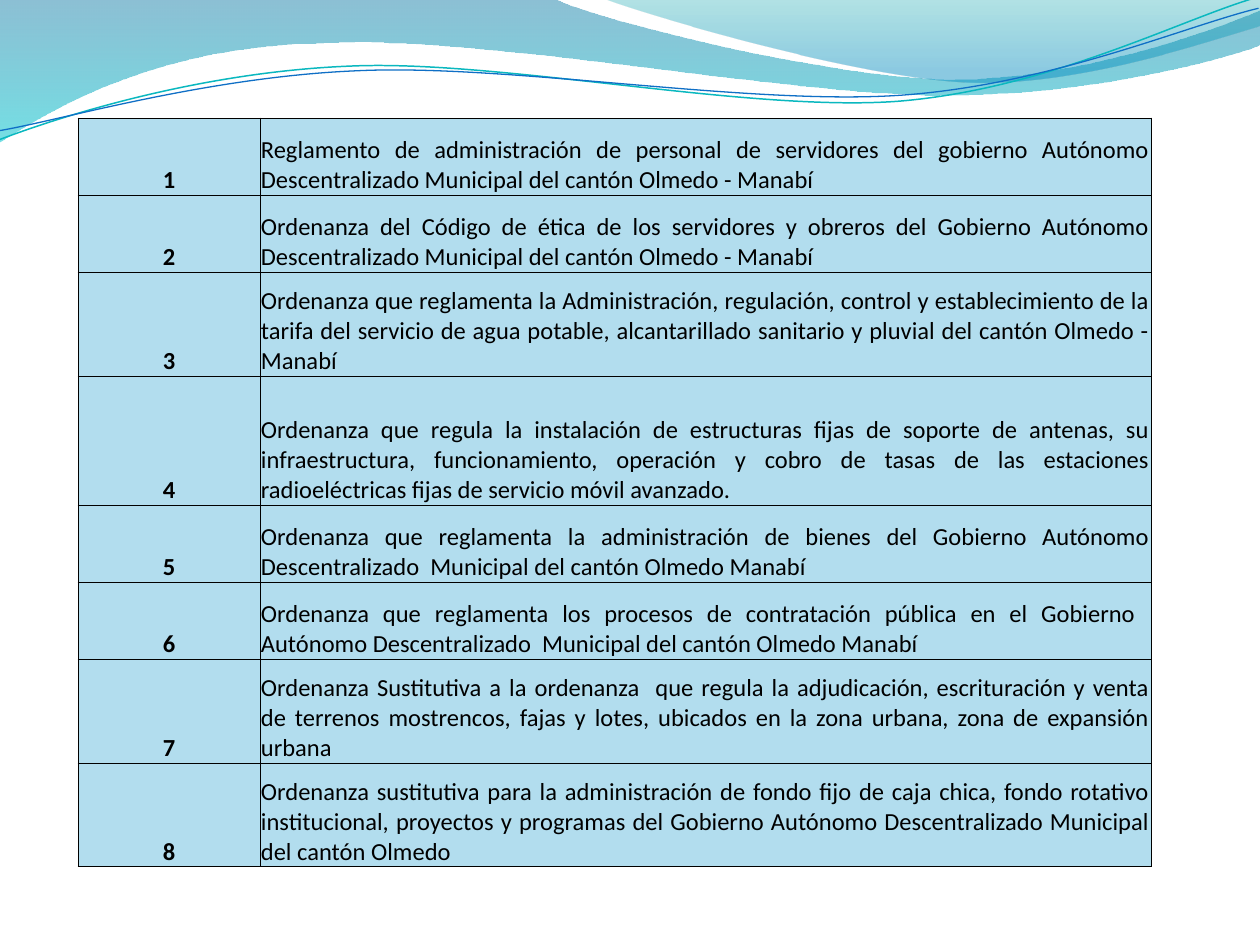
from pptx import Presentation
from pptx.dml.color import RGBColor as RGB
from pptx.enum.text import MSO_ANCHOR as Anchor, PP_ALIGN as Align
from pptx.oxml import parse_xml
from pptx.oxml.ns import nsdecls, qn
from pptx.util import Pt
from lxml.etree import SubElement

PX = 914400 // 126
COLORS = {
    "deep": "0074A1", "cyan": "00C6CF", "teal": "00A1A9", "azure": "008BBF",
    "teal_line": "0AB8BF", "blue_line": "0F6FC6",
    "cell": "B2DDEE", "ink": "000000",
}

BACK_WAVE = [
    (0, 0), (554, -1),
    (600, 21, 837, 79, 955, 79), (1075, 79, 1207, 33, 1260, 11),
    (1261, 45),
    (1237, 55, 1096, 96, 940, 95), (784, 95, 481, 35, 324, 43),
    (163, 45, 58, 105, -1, 142), (0, 0),
]
FRONT_WAVE = [
    (604, -1),
    (641, 14, 859, 78, 969, 82), (1079, 86, 1211, 40, 1260, 26),
    (1260, 0), (604, -1),
]
TEAL_CURVE = [
    (-3, 110),
    (58, 90, 199, 52, 350, 53), (499, 53, 745, 118, 896, 114),
    (1048, 109, 1184, 45, 1260, 27),
]
BLUE_CURVE = [
    (-3, 101),
    (57, 94, 207, 57, 358, 58), (509, 58, 750, 112, 902, 108),
    (1052, 104, 1188, 52, 1261, 38),
]
CURVE_ROTATION = 357.3

SHORT, MEDIUM, TALL = 77, 104, 129
ORDINANCES = [
    (SHORT, "Reglamento de administración de personal de servidores del gobierno Autónomo "
            "Descentralizado Municipal del cantón Olmedo - Manabí"),
    (SHORT, "Ordenanza del Código de ética de los servidores y obreros del Gobierno Autónomo "
            "Descentralizado Municipal del cantón Olmedo - Manabí"),
    (MEDIUM, "Ordenanza que reglamenta la Administración, regulación, control y establecimiento "
             "de la tarifa del servicio de agua potable, alcantarillado sanitario y pluvial del "
             "cantón Olmedo - Manabí"),
    (TALL, "Ordenanza que regula la instalación de estructuras fijas de soporte de antenas, su "
           "infraestructura, funcionamiento, operación y cobro de tasas de las estaciones "
           "radioeléctricas fijas de servicio móvil avanzado."),
    (SHORT, "Ordenanza que reglamenta la administración de bienes del Gobierno Autónomo "
            "Descentralizado  Municipal del cantón Olmedo Manabí"),
    (SHORT, "Ordenanza que reglamenta los procesos de contratación pública en el Gobierno  "
            "Autónomo Descentralizado  Municipal del cantón Olmedo Manabí"),
    (MEDIUM, "Ordenanza Sustitutiva a la ordenanza  que regula la adjudicación, escrituración y "
             "venta de terrenos mostrencos, fajas y lotes, ubicados en la zona urbana, zona de "
             "expansión urbana"),
    (MEDIUM, "Ordenanza sustitutiva para la administración de fondo fijo de caja chica, fondo "
             "rotativo institucional, proyectos y programas del Gobierno Autónomo "
             "Descentralizado Municipal del cantón Olmedo"),
]


class Deck:
    font, size, border = "Calibri", 14, 0.5

    def __init__(self, width, height):
        self.prs = Presentation()
        self.prs.slide_width, self.prs.slide_height = width * PX, height * PX
        self.slide = self.prs.slides.add_slide(self.prs.slide_layouts[6])

    def color(self, name):
        return RGB.from_string(COLORS[name])

    def outline(self, steps, close):
        points = [(x * PX, y * PX) for step in steps for x, y in zip(step[::2], step[1::2])]
        builder = self.slide.shapes.build_freeform(*points[0])
        builder.add_line_segments(points[1:], close=close)
        sp = builder.convert_to_shape()
        sp.shadow.inherit = False
        segments = iter(list(sp._element.spPr.iter(qn("a:lnTo"))))
        for step in steps[1:]:
            first = next(segments)
            if len(step) == 6:
                first.tag = qn("a:cubicBezTo")
                for _ in range(2):
                    control = next(segments)
                    first.append(control[0])
                    control.getparent().remove(control)
        return sp

    def wave(self, steps, stops):
        sp = self.outline(steps, True)
        sp.line.fill.background()
        sp.fill.gradient()
        sp.fill.gradient_angle = 270
        for stop, (position, name, _) in zip(sp.fill.gradient_stops, stops):
            stop.position = position
            stop.color.rgb = self.color(name)
        for clr, (_, _, opacity) in zip(sp._element.spPr.iter(qn("a:srgbClr")), stops):
            SubElement(clr, qn("a:alpha")).set("val", str(opacity * 1000))

    def curve(self, steps, name, weight):
        sp = self.outline(steps, False)
        sp.rotation = CURVE_ROTATION
        sp.fill.background()
        sp.line.color.rgb = self.color(name)
        sp.line.width = Pt(weight)

    def cell(self, cell, text, align, bold):
        cell.margin_left = cell.margin_right = cell.margin_top = PX
        cell.margin_bottom = 0
        cell.vertical_anchor = Anchor.BOTTOM
        tcPr = cell._tc.get_or_add_tcPr()
        for side in "LRTB":
            tcPr.append(parse_xml(
                f'<a:ln{side} {nsdecls("a")} w="{Pt(self.border)}"><a:solidFill>'
                f'<a:srgbClr val="{COLORS["ink"]}"/></a:solidFill></a:ln{side}>'))
        cell.fill.solid()
        cell.fill.fore_color.rgb = self.color("cell")
        p = cell.text_frame.paragraphs[0]
        p.text, p.alignment = text, align
        p.font.name, p.font.size, p.font.bold = self.font, Pt(self.size), bold
        p.font.color.rgb = self.color("ink")

    def numbered_table(self, left, top, widths, rows):
        height = sum(h for h, _ in rows)
        table = self.slide.shapes.add_table(
            len(rows), len(widths), left * PX, top * PX, sum(widths) * PX, height * PX).table
        for column, width in zip(table.columns, widths):
            column.width = width * PX
        for i, (row_height, text) in enumerate(rows):
            table.rows[i].height = row_height * PX
            self.cell(table.cell(i, 0), str(i + 1), Align.CENTER, True)
            self.cell(table.cell(i, 1), text, Align.JUSTIFY, False)


def main():
    deck = Deck(1260, 945)
    deck.wave(BACK_WAVE, [(0, "deep", 45), (1, "cyan", 55)])
    deck.wave(FRONT_WAVE, [(0, "teal", 30), (0.8, "azure", 45)])
    deck.curve(TEAL_CURVE, "teal_line", 0.85)
    deck.curve(BLUE_CURVE, "blue_line", 0.75)
    deck.numbered_table(78, 118, (182, 891), ORDINANCES)
    deck.prs.save("out.pptx")


if __name__ == "__main__":
    main()
